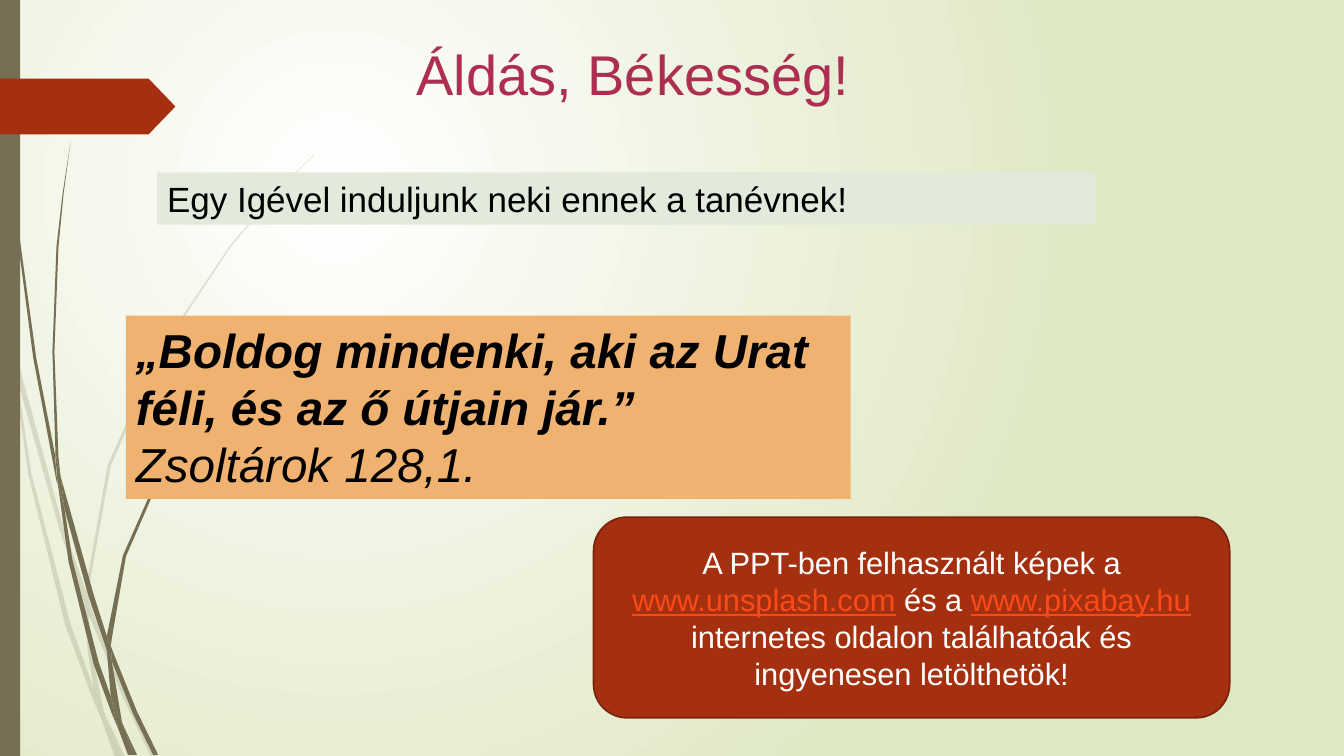
from lxml import etree
from pptx import Presentation
from pptx.dml.color import RGBColor
from pptx.enum.shapes import MSO_SHAPE
from pptx.enum.text import MSO_ANCHOR, MSO_AUTO_SIZE, PP_ALIGN
from pptx.oxml.ns import qn
from pptx.util import Pt

RECTANGLE = MSO_SHAPE.RECTANGLE
ROUNDED = MSO_SHAPE.ROUNDED_RECTANGLE
ARROW_TAG = MSO_SHAPE.PENTAGON
TOP, MIDDLE = MSO_ANCHOR.TOP, MSO_ANCHOR.MIDDLE
LEFT, CENTER = PP_ALIGN.LEFT, PP_ALIGN.CENTER
GROW, FIXED = MSO_AUTO_SIZE.SHAPE_TO_FIT_TEXT, MSO_AUTO_SIZE.NONE

WHITE = RGBColor(0xFF, 0xFF, 0xFF)
BLACK = RGBColor(0x00, 0x00, 0x00)
PALE_GREEN = RGBColor(0xDF, 0xE8, 0xC4)
OLIVE = RGBColor(0x76, 0x6F, 0x54)
RUST = RGBColor(0xA5, 0x30, 0x10)
DARK_RUST = RGBColor(0x7A, 0x24, 0x0C)
LINK_ORANGE = RGBColor(0xFB, 0x4A, 0x18)
APRICOT = RGBColor(0xF0, 0xB2, 0x70)
MIST = RGBColor(0xE3, 0xE9, 0xDB)
CRIMSON = RGBColor(0xAE, 0x2E, 0x51)

BODY_FONT = "Arial"
QUOTE_MARK_FONT = "TeX Gyre Adventor"

# Grass outlines are drawn on a grid of this step.
GRASS_STEP = Pt(0.72)

FAINT_GRASS = [
    [(11, 350), (9, 322), (0, 282), (0, 299), (10, 344)],
    [(58, 522), (84, 599), (85, 586), (62, 520), (14, 345), (17, 376)],
    [(92, 607), (88, 596), (88, 610), (123, 694), (150, 751), (155, 751), (127, 692)],
    [(119, 751), (124, 751), (105, 711)],
    [(93, 683), (70, 619), (31, 469), (17, 376), (11, 350), (28, 470), (65, 621),
     (92, 693), (101, 714), (99, 707)],
    [(84, 599), (87, 646), (93, 683), (96, 692), (105, 711), (103, 706), (91, 646),
     (88, 610), (88, 608)],
    [(88, 584), (110, 462), (160, 349), (229, 245), (268, 198), (290, 175), (312, 154),
     (312, 153), (289, 175), (268, 197), (228, 244), (158, 348), (107, 461), (85, 584),
     (85, 586), (88, 596)],
    [(101, 714), (114, 751), (119, 751)],
    [(88, 608), (88, 610), (88, 596), (85, 586), (84, 599)],
    [(96, 692), (93, 683), (99, 707), (101, 714), (119, 751), (105, 711)],
]

DARK_GRASS = [
    [(7, 110), (17, 233), (33, 355), (56, 477), (57, 481), (55, 457), (55, 453),
     (36, 355), (19, 232), (8, 109), (5, 48), (4, 0), (3, 0), (4, 48)],
    [(88, 592), (106, 645), (106, 633), (106, 631), (93, 590), (60, 472), (64, 505)],
    [(113, 649), (110, 641), (111, 656), (132, 708), (152, 749), (157, 749), (136, 706)],
    [(110, 691), (98, 657), (72, 556), (64, 505), (57, 477), (68, 557), (93, 659),
     (111, 708), (117, 722), (116, 717)],
    [(60, 472), (58, 453), (54, 349), (58, 245), (63, 193), (70, 141), (62, 193),
     (56, 245), (52, 349), (55, 449)],
    [(133, 749), (136, 749), (122, 719)],
    [(57, 477), (64, 505), (60, 472), (55, 449), (55, 453)],
    [(111, 633), (125, 552), (158, 476), (205, 406), (231, 374), (245, 359), (261, 344),
     (260, 344), (245, 358), (231, 373), (204, 405), (156, 474), (122, 551), (106, 631),
     (110, 641)],
    [(117, 722), (127, 749), (131, 749)],
    [(106, 645), (110, 691), (116, 706), (122, 719), (121, 716), (111, 656), (109, 651)],
    [(106, 645), (109, 651), (111, 656), (110, 641), (106, 631), (106, 633)],
    [(116, 706), (110, 691), (116, 717), (117, 722), (130, 749), (133, 749), (122, 719)],
]


def paint_background(slide):
    """Circular gradient, brightest in the upper left quarter."""
    fill = slide.background.fill
    fill.gradient()
    for stop, color in zip(fill.gradient_stops, (WHITE, PALE_GREEN)):
        stop.color.rgb = color
    gradient = slide.element.find(".//" + qn("a:gradFill"))
    gradient.remove(gradient.find(qn("a:lin")))
    circle = etree.SubElement(gradient, qn("a:path"), path="circle")
    etree.SubElement(circle, qn("a:fillToRect"),
                     l="50000", t="50000", r="100000", b="100000")


def paint(shape, fill, line=None):
    shape.shadow.inherit = False
    shape.fill.solid()
    shape.fill.fore_color.rgb = fill
    if line is None:
        shape.line.fill.background()
    else:
        shape.line.color.rgb = line
        shape.line.width = Pt(1.25)


def add_grass(slide, outlines, opacity=100):
    for first, *others in outlines:
        builder = slide.shapes.build_freeform(*first, scale=GRASS_STEP)
        builder.add_line_segments(others, close=True)
        blade = builder.convert_to_shape()
        paint(blade, OLIVE)
        if opacity < 100:
            color = blade.element.spPr.find(qn("a:solidFill"))[0]
            etree.SubElement(color, qn("a:alpha"), val=str(opacity * 1000))


def add_panel(slide, kind, left, top, width, height, fill, line=None):
    panel = slide.shapes.add_shape(kind, Pt(left), Pt(top), Pt(width), Pt(height))
    paint(panel, fill, line)
    return panel


def write(shape, paragraphs, size, color=BLACK, align=LEFT, anchor=TOP, fit=GROW, italic=False):
    """Fill a shape with paragraphs, each a list of (text, run format) pairs."""
    frame = shape.text_frame
    frame.word_wrap = True
    frame.auto_size = fit
    frame.vertical_anchor = anchor
    for index, runs in enumerate(paragraphs):
        paragraph = frame.add_paragraph() if index else frame.paragraphs[0]
        paragraph.alignment = align
        for text, style in runs:
            run = paragraph.add_run()
            run.text = text
            run.font.size = Pt(size)
            run.font.italic = italic
            run.font.name = style.get("font", BODY_FONT)
            run.font.bold = style.get("bold", False)
            run.font.underline = style.get("underline", False)
            run.font.color.rgb = style.get("color", color)


def main():
    deck = Presentation()
    deck.slide_width, deck.slide_height = Pt(960), Pt(540)
    slide = deck.slides.add_slide(deck.slide_layouts[5])
    paint_background(slide)

    add_grass(slide, FAINT_GRASS, opacity=20)
    add_grass(slide, DARK_GRASS)
    add_panel(slide, RECTANGLE, 0, 0, 14.4, 540, OLIVE)
    tag = add_panel(slide, ARROW_TAG, 0, 56.2, 125.3, 39.8, RUST)
    tag.adjustments[0] = 0.48

    verse = add_panel(slide, RECTANGLE, 90, 225.4, 517.7, 131, APRICOT)
    write(verse, [
        [("„", {"font": QUOTE_MARK_FONT, "bold": True}),
         ("Boldog mindenki, aki az Urat féli, és az ő útjain jár.”", {"bold": True})],
        [("Zsoltárok 128,1.", {})],
    ], size=34, italic=True)

    greeting = slide.shapes.title
    greeting.left, greeting.top = Pt(212), Pt(24.5)
    greeting.width, greeting.height = Pt(480), Pt(55.4)
    write(greeting, [[("Áldás, Békesség!", {})]], size=40, color=CRIMSON, align=CENTER)

    opening = add_panel(slide, RECTANGLE, 112.3, 123.1, 670.3, 37.4, MIST)
    write(opening, [[("Egy Igével induljunk neki ennek a tanévnek!", {})]], size=25)

    web_address = {"color": LINK_ORANGE, "underline": True}
    credits = add_panel(slide, ROUNDED, 424, 369.4, 454.3, 143.3, RUST, DARK_RUST)
    write(credits, [[
        ("A PPT-ben felhasznált képek a ", {}),
        ("www.unsplash.com", web_address),
        (" és a ", {}),
        ("www.pixabay.hu", web_address),
        (" internetes oldalon találhatóak és ingyenesen letölthetök!", {}),
    ]], size=22, color=WHITE, align=CENTER, anchor=MIDDLE, fit=FIXED)

    deck.save("out.pptx")


if __name__ == "__main__":
    main()
